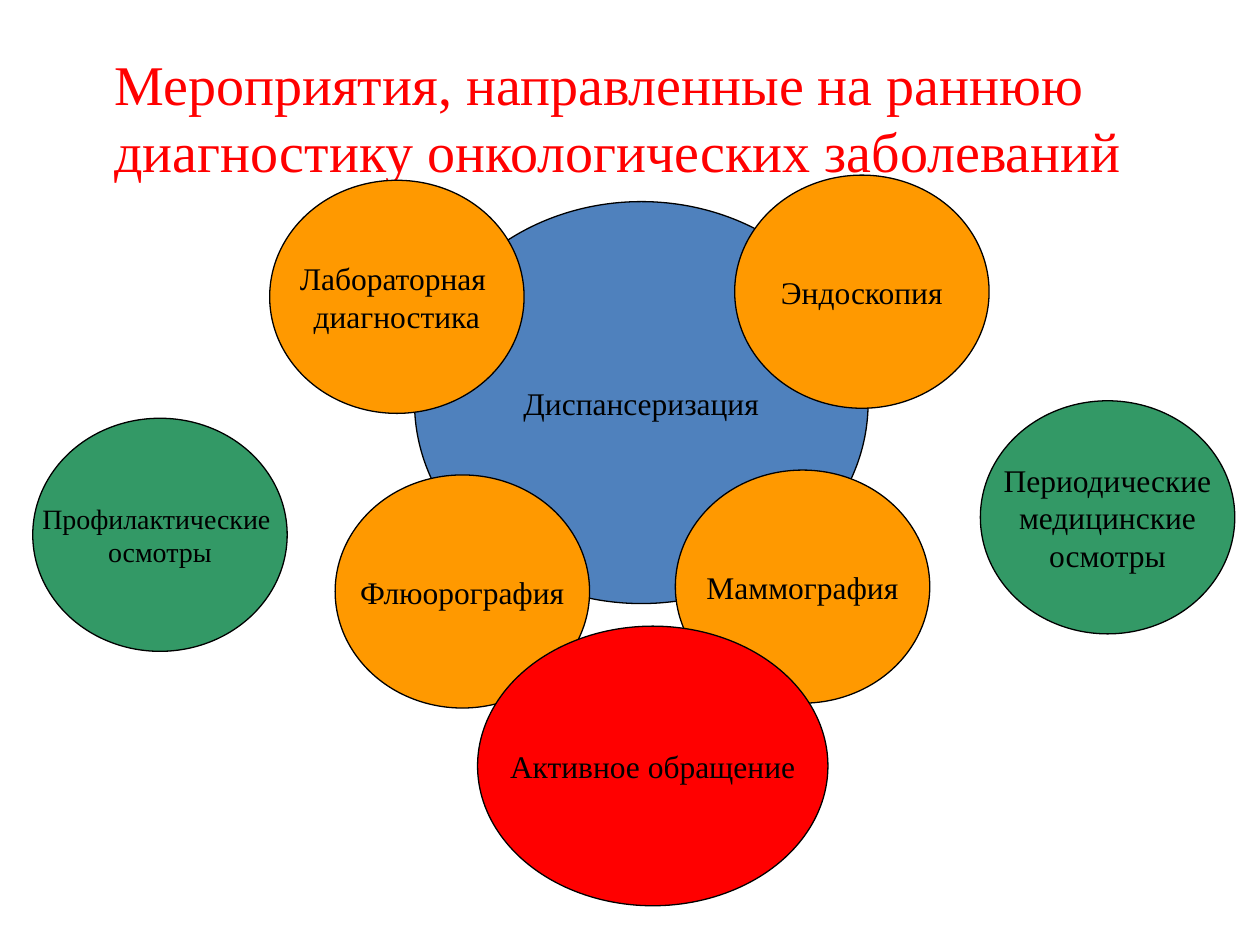
import pptx
import pptx.dml.color
import pptx.enum.shapes
import pptx.enum.text
import pptx.util

Pt = pptx.util.Pt
BLACK, RED, BLUE, ORANGE, GREEN = "000000", "FF0000", "4F81BD", "FF9900", "339966"
SMALL = (145.4, 133.2)


def rgb(value):
    return pptx.dml.color.RGBColor.from_string(value)


class Deck:
    font = "Times New Roman"
    line_width = 0.75

    def __init__(self, width, height):
        self.prs = pptx.Presentation()
        self.prs.slide_width, self.prs.slide_height = Pt(width), Pt(height)
        self.s = self.prs.slides.add_slide(self.prs.slide_layouts[6])

    def style(self, p, size, color):
        p.font.name = self.font
        p.font.size = Pt(size)
        p.font.color.rgb = rgb(color)

    def title(self, text, left, top, width, height):
        sp = self.s.shapes.add_textbox(Pt(left), Pt(top), Pt(width), Pt(height))
        tf = sp.text_frame
        tf.word_wrap = True
        tf.auto_size = pptx.enum.text.MSO_AUTO_SIZE.SHAPE_TO_FIT_TEXT
        p = tf.paragraphs[0]
        p.text = text
        p.space_before = Pt(3.4)
        self.style(p, 32, RED)

    def ellipse(self, text, fill, left, top, size=SMALL, font_size=18):
        sp = self.s.shapes.add_shape(
            pptx.enum.shapes.MSO_SHAPE.OVAL, Pt(left), Pt(top), *map(Pt, size))
        sp.shadow.inherit = False
        sp.fill.solid()
        sp.fill.fore_color.rgb = rgb(fill)
        sp.line.color.rgb = rgb(BLACK)
        sp.line.width = Pt(self.line_width)
        tf = sp.text_frame
        tf.word_wrap = False
        tf.vertical_anchor = pptx.enum.text.MSO_ANCHOR.MIDDLE
        tf.text = text
        for p in tf.paragraphs:
            p.alignment = pptx.enum.text.PP_ALIGN.CENTER
            self.style(p, font_size, BLACK)


def main():
    deck = Deck(720, 540)
    deck.title("Мероприятия, направленные на раннюю диагностику онкологических заболеваний",
               58.3, 24.5, 620, 84.2)
    deck.ellipse("Диспансеризация", BLUE, 236.9, 115.2, (259.2, 229.7))
    for text, left, top in (
        ("Флюорография", 191.5, 271.4),
        ("Маммография", 385.9, 268.6),
        ("Эндоскопия", 419.8, 100.1),
        ("Лабораторная \nдиагностика", 154.1, 103),
    ):
        deck.ellipse(text, ORANGE, left, top)
    deck.ellipse("Профилактические \nосмотры", GREEN, 18.7, 239, font_size=16)
    deck.ellipse("Периодические\nмедицинские\nосмотры", GREEN, 560.2, 229)
    deck.ellipse("Активное обращение", RED, 272.9, 357.8, (200.2, 159.8))
    deck.prs.save("out.pptx")


if __name__ == "__main__":
    main()
